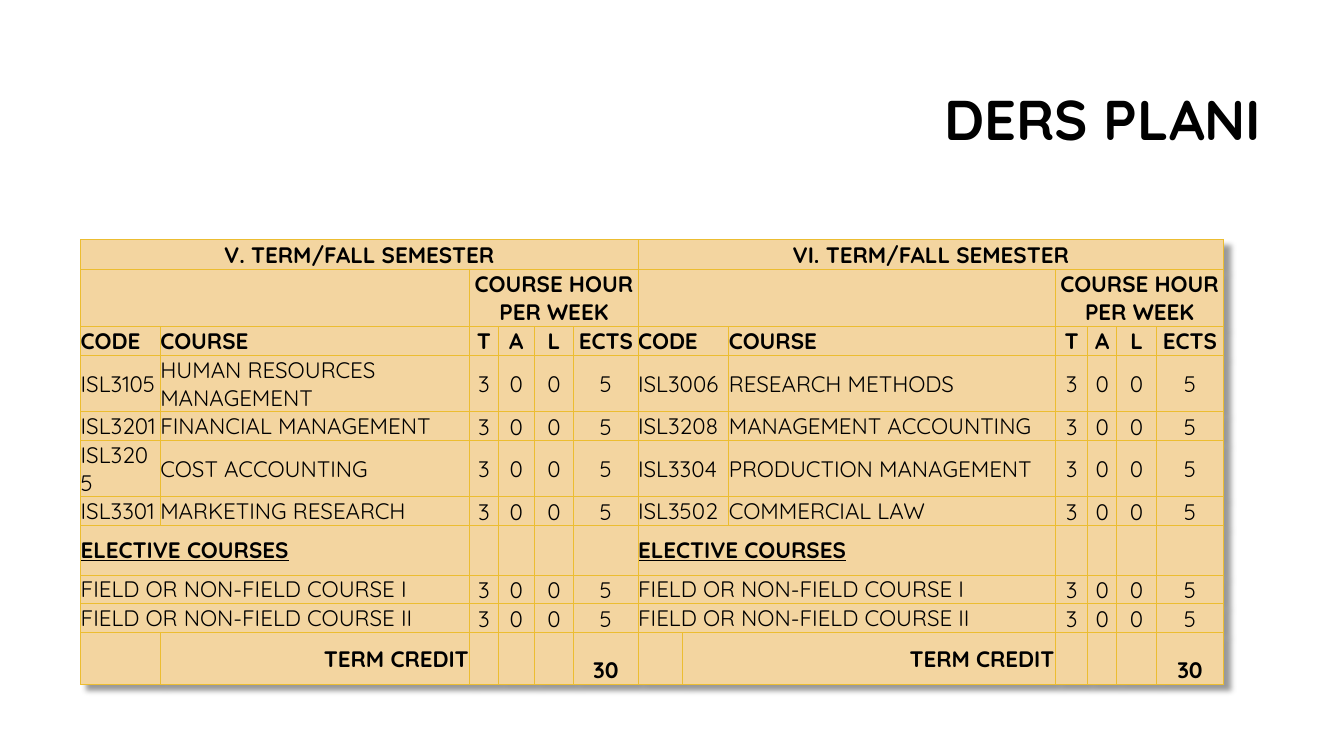
from dataclasses import dataclass

from lxml.etree import SubElement
from pptx import Presentation
from pptx.dml.color import RGBColor
from pptx.enum.text import MSO_ANCHOR, PP_ALIGN
from pptx.oxml import parse_xml
from pptx.oxml.ns import nsdecls, qn
from pptx.slide import Slide
from pptx.table import Table, _Cell
from pptx.text.text import _Paragraph
from pptx.util import Inches, Pt

COLORS = {"text": "000000", "fill": "F3D5A0", "grid": "ECBD31", "shadow": "000000"}
REGULAR = {"name": "Quicksand", "size": Pt(16), "bold": False}
BOLD = REGULAR | {"bold": True}
UNDERLINED = BOLD | {"underline": True}
HEADING = BOLD | {"size": Pt(40)}

COLUMN_WIDTHS = [0.79, 3.07, 0.28, 0.36, 0.39, 0.64,
                 0.44, 0.46, 3.24, 0.32, 0.29, 0.39, 0.67]
ROW_HEIGHTS = [0.29, 0.57, 0.28, 0.56, 0.28, 0.28, 0.28, 0.49, 0.28, 0.28, 0.51]
HOUR_LABELS = ["T", "A", "L", "ECTS"]
HOURS = ["3", "0", "0", "5"]
ELECTIVES = ["FIELD OR NON-FIELD COURSE I", "FIELD OR NON-FIELD COURSE II"]


@dataclass
class Semester:
    title: str
    first_column: int
    code_span: int
    credit_column: int
    hours_column: int
    courses: dict[str, str]


SEMESTERS = [
    Semester("V. TERM/FALL SEMESTER", 0, 1, 1, 2, {
        "ISL3105": "HUMAN RESOURCES MANAGEMENT",
        "ISL3201": "FINANCIAL MANAGEMENT",
        "ISL3205": "COST ACCOUNTING",
        "ISL3301": "MARKETING RESEARCH",
    }),
    Semester("VI. TERM/FALL SEMESTER", 6, 2, 7, 9, {
        "ISL3006": "RESEARCH METHODS",
        "ISL3208": "MANAGEMENT ACCOUNTING",
        "ISL3304": "PRODUCTION MANAGEMENT",
        "ISL3502": "COMMERCIAL LAW",
    }),
]


def format_text(paragraph: _Paragraph, text: str, style: dict, align: PP_ALIGN) -> None:
    paragraph.alignment = align
    run = paragraph.add_run()
    run.text = text
    for attribute, value in style.items():
        setattr(run.font, attribute, value)
    run.font.color.rgb = RGBColor.from_string(COLORS["text"])


def style_cell(cell: _Cell) -> None:
    margins = {"margin_left": 0, "margin_right": 0, "margin_top": 0, "margin_bottom": 0}
    for attribute, value in (margins | {"vertical_anchor": MSO_ANCHOR.MIDDLE}).items():
        setattr(cell, attribute, value)
    properties = cell._tc.get_or_add_tcPr()
    for side in ("a:lnL", "a:lnR", "a:lnT", "a:lnB"):
        border = SubElement(properties, qn(side), w=str(Pt(0.75)))
        line_fill = SubElement(border, qn("a:solidFill"))
        SubElement(line_fill, qn("a:srgbClr"), val=COLORS["grid"])
    cell.fill.solid()
    cell.fill.fore_color.rgb = RGBColor.from_string(COLORS["fill"])


def write(table: Table, row: int, column: int, text: str, style: dict,
          align: PP_ALIGN = PP_ALIGN.LEFT, span: int = 1) -> _Cell:
    cell = table.cell(row, column)
    if span > 1:
        cell.merge(table.cell(row, column + span - 1))
    if text:
        format_text(cell.text_frame.paragraphs[0], text, style, align)
    if align != PP_ALIGN.LEFT:
        cell.margin_left = cell.margin_right = cell.margin_top = Inches(0.01)
    return cell


def write_hours(table: Table, row: int, semester: Semester, values: list[str],
                style: dict) -> None:
    for column, value in enumerate(values, semester.hours_column):
        write(table, row, column, value, style, PP_ALIGN.CENTER)


def write_semester(table: Table, semester: Semester) -> None:
    first, hours = semester.first_column, semester.hours_column
    course_column = first + semester.code_span
    label_span = hours - first

    write(table, 0, first, semester.title, BOLD, PP_ALIGN.CENTER, label_span + len(HOURS))
    write(table, 1, first, "", BOLD, span=label_span)
    write(table, 1, hours, "COURSE HOUR PER WEEK", BOLD, PP_ALIGN.CENTER, len(HOURS))

    listing = [("CODE", "COURSE"), *semester.courses.items()]
    for row, (code, course) in enumerate(listing, 2):
        style = BOLD if row == 2 else REGULAR
        write(table, row, first, code, style, span=semester.code_span)
        write(table, row, course_column, course, style)
        write_hours(table, row, semester, HOUR_LABELS if row == 2 else HOURS, style)

    elective_row = 2 + len(listing)
    write(table, elective_row, first, "ELECTIVE COURSES", UNDERLINED, span=label_span)
    for row, elective in enumerate(ELECTIVES, elective_row + 1):
        write(table, row, first, elective, REGULAR, span=label_span)
        write_hours(table, row, semester, HOURS, REGULAR)

    credit_row = len(ROW_HEIGHTS) - 1
    write(table, credit_row, semester.credit_column, "TERM CREDIT", BOLD,
          PP_ALIGN.RIGHT, hours - semester.credit_column)
    total = write(table, credit_row, hours + len(HOURS) - 1, "30", BOLD, PP_ALIGN.CENTER)
    total.vertical_anchor = MSO_ANCHOR.BOTTOM


def add_shadow(table: Table) -> None:
    table._tbl.tblPr.insert(0, parse_xml(
        f'<a:effectLst {nsdecls("a")}>'
        '<a:outerShdw blurRad="50800" dist="76200" dir="2700000" algn="tl" rotWithShape="0">'
        f'<a:srgbClr val="{COLORS["shadow"]}"><a:alpha val="40000"/></a:srgbClr>'
        '</a:outerShdw></a:effectLst>'))


def add_course_plan(slide: Slide) -> None:
    table = slide.shapes.add_table(
        len(ROW_HEIGHTS), len(COLUMN_WIDTHS), Inches(0.8), Inches(2.38),
        Inches(sum(COLUMN_WIDTHS)), Inches(sum(ROW_HEIGHTS))).table
    table.first_row = table.horz_banding = False
    for column, width in zip(table.columns, COLUMN_WIDTHS):
        column.width = Inches(width)
    for row, height in zip(table.rows, ROW_HEIGHTS):
        row.height = Inches(height)
    for cell in table.iter_cells():
        style_cell(cell)
    for semester in SEMESTERS:
        write_semester(table, semester)
    add_shadow(table)


def add_heading(slide: Slide) -> None:
    title = slide.shapes.title
    frame = {"left": 3.19, "top": 0.76, "width": 9.42, "height": 0.9}
    for attribute, value in frame.items():
        setattr(title, attribute, Inches(value))
    title.text_frame.vertical_anchor = MSO_ANCHOR.MIDDLE
    paragraph = title.text_frame.paragraphs[0]
    paragraph.line_spacing = 0.9
    format_text(paragraph, "DERS PLANI", HEADING, PP_ALIGN.RIGHT)


def main() -> None:
    presentation = Presentation()
    presentation.slide_width = Inches(13.33)
    presentation.slide_height = Inches(7.5)
    slide = presentation.slides.add_slide(presentation.slide_layouts[5])
    add_course_plan(slide)
    add_heading(slide)
    presentation.save("out.pptx")


if __name__ == "__main__":
    main()
